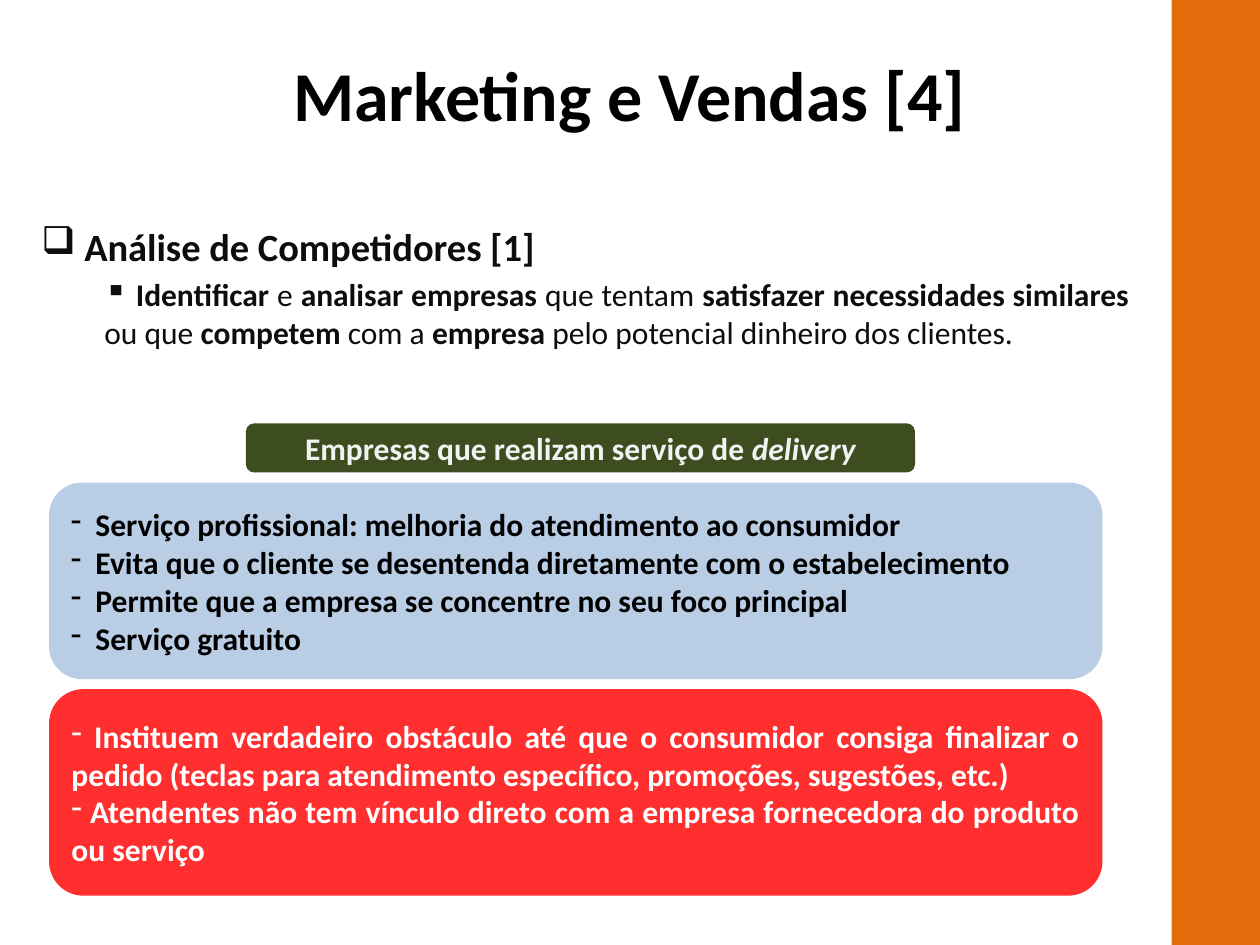
from dataclasses import dataclass

from lxml.etree import SubElement
from pptx import Presentation
from pptx.dml.color import RGBColor
from pptx.enum.shapes import MSO_SHAPE
from pptx.enum.text import MSO_ANCHOR, PP_ALIGN
from pptx.oxml.ns import qn
from pptx.util import Pt

BLACK = RGBColor(0x00, 0x00, 0x00)
WHITE = RGBColor(0xFF, 0xFF, 0xFF)
NEAR_BLACK = RGBColor(0x0D, 0x0D, 0x0D)
LIGHT_GREY = RGBColor(0xF2, 0xF2, 0xF2)
ORANGE = RGBColor(0xE4, 0x6C, 0x0A)
BLUE = RGBColor(0xB9, 0xCD, 0xE5)
GREEN = RGBColor(0x3E, 0x4D, 0x1F)
RED = RGBColor(0xFF, 0x2F, 0x2F)
FONT_NAME = "Calibri"


@dataclass(frozen=True)
class Run:
    text: str
    bold: bool | None = None
    italic: bool | None = None


@dataclass(frozen=True)
class Entry:
    runs: tuple[Run, ...]
    color: RGBColor
    size: float = 18
    bold: bool | None = True
    align: PP_ALIGN = PP_ALIGN.JUSTIFY
    bullet: str = ""
    margin: float = 0
    indent: float = 0
    level: int = 0
    space_before: float = 0


@dataclass(frozen=True)
class Panel:
    left: float
    top: float
    width: float
    height: float
    fill: RGBColor
    entries: tuple[Entry, ...] = ()
    kind: MSO_SHAPE = MSO_SHAPE.ROUNDED_RECTANGLE


def write_entries(text_frame, entries: tuple[Entry, ...]) -> None:
    text_frame.word_wrap = True
    for index, entry in enumerate(entries):
        paragraph = text_frame.add_paragraph() if index else text_frame.paragraphs[0]
        paragraph.alignment = entry.align
        paragraph.level = entry.level
        paragraph.space_before = Pt(entry.space_before)
        if entry.bullet:
            properties = paragraph._p.get_or_add_pPr()
            properties.set("marL", str(Pt(entry.margin)))
            properties.set("indent", str(Pt(entry.indent)))
            SubElement(properties, qn("a:buChar"), char=entry.bullet)
        paragraph.font.name = FONT_NAME
        paragraph.font.size = Pt(entry.size)
        paragraph.font.bold = entry.bold
        paragraph.font.color.rgb = entry.color
        for part in entry.runs:
            run = paragraph.add_run()
            run.text = part.text
            run.font.bold = part.bold
            run.font.italic = part.italic


def draw_panel(slide, panel: Panel) -> None:
    shape = slide.shapes.add_shape(
        panel.kind, Pt(panel.left), Pt(panel.top), Pt(panel.width), Pt(panel.height)
    )
    shape.shadow.inherit = False
    shape.fill.solid()
    shape.fill.fore_color.rgb = panel.fill
    shape.line.fill.background()
    shape.text_frame.vertical_anchor = MSO_ANCHOR.MIDDLE
    write_entries(shape.text_frame, panel.entries)


def dash_list(texts: tuple[str, ...], color: RGBColor, hanging: float = 0) -> tuple[Entry, ...]:
    return tuple(
        Entry((Run(text),), color, bullet="-", margin=hanging, indent=-hanging)
        for text in texts
    )


ANALYSIS = (
    Entry((Run("Análise de Competidores [1]"),), NEAR_BLACK, size=22,
          bullet="❑", margin=24.5, indent=-24.5, space_before=4.4),
    Entry(
        (
            Run(" "),
            Run("Identificar", True),
            Run(" e "),
            Run("analisar empresas", True),
            Run(" que tentam "),
            Run("satisfazer necessidades similares", True),
            Run(" ou que "),
            Run("competem", True),
            Run(" com a "),
            Run("empresa", True),
            Run(" pelo potencial dinheiro dos clientes."),
        ),
        NEAR_BLACK, bold=False, bullet="▪", margin=36, level=1, space_before=3.6,
    ),
)

ADVANTAGES = (
    "Serviço profissional: melhoria do atendimento ao consumidor",
    "Evita que o cliente se desentenda diretamente com o estabelecimento",
    "Permite que a empresa se concentre no seu foco principal",
    "Serviço gratuito",
)

DRAWBACKS = (
    " Instituem verdadeiro obstáculo até que o consumidor consiga finalizar o pedido "
    "(teclas para atendimento específico, promoções, sugestões, etc.)",
    " Atendentes não tem vínculo direto com a empresa fornecedora do produto ou serviço",
)

PANELS = (
    Panel(669.5, 0, 50.5, 540, ORANGE, kind=MSO_SHAPE.RECTANGLE),
    Panel(28, 275.8, 602, 112.3, BLUE, dash_list(ADVANTAGES, BLACK, 14)),
    Panel(140.5, 241.9, 382.4, 28.1, GREEN, (
        Entry((Run("Empresas que realizam serviço de "), Run("delivery", italic=True)),
              LIGHT_GREY, align=PP_ALIGN.CENTER),
    )),
    Panel(28, 393.8, 602, 118.1, RED, dash_list(DRAWBACKS, WHITE)),
)


def main() -> None:
    presentation = Presentation()
    presentation.slide_width, presentation.slide_height = Pt(720), Pt(540)
    slide = presentation.slides.add_slide(presentation.slide_layouts[5])

    title = slide.shapes.title
    title.left, title.top, title.width, title.height = Pt(16.6), Pt(11.5), Pt(686), Pt(84.2)
    title.text_frame.vertical_anchor = MSO_ANCHOR.MIDDLE
    write_entries(title.text_frame, (
        Entry((Run("Marketing e Vendas [4]"),), BLACK, size=40, align=PP_ALIGN.CENTER),
    ))

    analysis = slide.shapes.add_textbox(Pt(16.6), Pt(123.8), Pt(635.8), Pt(427.7))
    write_entries(analysis.text_frame, ANALYSIS)

    for panel in PANELS:
        draw_panel(slide, panel)
    presentation.save("out.pptx")


if __name__ == "__main__":
    main()
